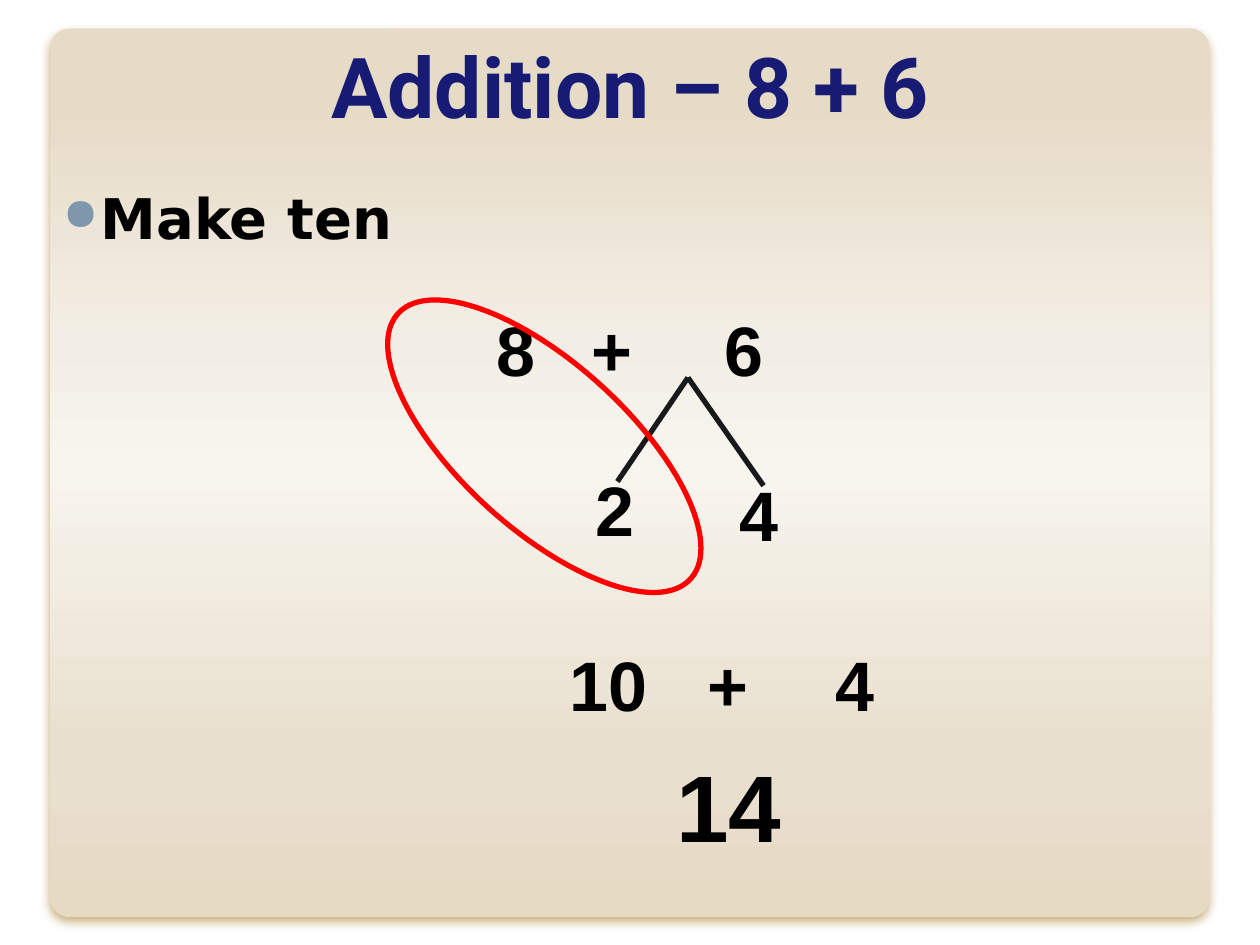
from dataclasses import dataclass

from lxml.etree import SubElement
from pptx import Presentation
from pptx.dml.color import RGBColor
from pptx.enum.shapes import MSO_CONNECTOR, MSO_SHAPE
from pptx.enum.text import MSO_ANCHOR, PP_ALIGN
from pptx.oxml.ns import qn
from pptx.util import Inches, Pt


@dataclass(frozen=True)
class Theme:
    title: str = "171B73"
    text: str = "000000"
    bullet: str = "7E97AD"
    branch: str = "17191A"
    ring: str = "FF0000"
    shadow: str = "956400"
    panel: tuple = ((0, "E6DBC6"), (10, "E7DCC8"), (35, "F3EEE5"),
                    (50, "F8F5EF"), (60, "F3EEE4"), (80, "E9E0CF"), (100, "E6DAC5"))
    title_font: str = "Roboto"
    heading_font: str = "DejaVu Sans"
    number_font: str = "Arial"
    title_size: int = 48
    heading_size: int = 32
    number_size: int = 40
    answer_size: int = 54
    stroke: int = 3


THEME = Theme()


@dataclass(frozen=True)
class Box:
    left: int
    top: int
    width: int
    height: int

    def point(self, across, down):
        return int(self.left + across * self.width), int(self.top + down * self.height)

    def area(self, left, top, width, height):
        return Box(*self.point(left, top), int(width * self.width), int(height * self.height))

    @property
    def bounds(self):
        return self.left, self.top, self.width, self.height


def add_element(parent, tag, **attributes):
    return SubElement(parent, qn(tag), {name: str(value) for name, value in attributes.items()})


def style(paragraph, font_name, size, color=THEME.text):
    font = paragraph.font
    font.name, font.size, font.bold = font_name, Pt(size), True
    font.color.rgb = RGBColor.from_string(color)


def set_line(shape, color):
    shape.line.color.rgb = RGBColor.from_string(color)
    shape.line.width = Pt(THEME.stroke)


def set_tabs(paragraph, positions):
    properties = paragraph._p.get_or_add_pPr()
    tab_list = add_element(properties, "a:tabLst")
    for position in positions:
        add_element(tab_list, "a:tab", pos=int(position), algn="ctr")


def add_number(slide, box, text, size=THEME.number_size, tabs=(), alignment=PP_ALIGN.CENTER):
    frame = slide.shapes.add_textbox(*box.bounds).text_frame
    frame.word_wrap = True
    paragraph = frame.paragraphs[0]
    paragraph.text = text
    paragraph.alignment = alignment
    if tabs:
        set_tabs(paragraph, tabs)
    style(paragraph, THEME.number_font, size)


def add_panel(slide, box):
    panel = slide.shapes.add_shape(MSO_SHAPE.ROUNDED_RECTANGLE, *box.bounds)
    panel.adjustments[0] = 0.022
    panel.line.fill.background()
    panel.fill.gradient()
    panel.fill.gradient_angle = 270
    properties = panel._element.spPr
    stops = properties.find(".//" + qn("a:gsLst"))
    stops.clear()
    for share, color in THEME.panel:
        add_element(add_element(stops, "a:gs", pos=share * 1000), "a:srgbClr", val=color)
    effects = add_element(properties, "a:effectLst")
    shadow = add_element(effects, "a:outerShdw", blurRad=Pt(5), dist=int(Pt(3.6)),
                         dir=5400000, rotWithShape=0)
    shadow_color = add_element(shadow, "a:srgbClr", val=THEME.shadow)
    add_element(shadow_color, "a:alpha", val=50000)
    slide.shapes._spTree.insert(2, panel._element)


def add_title(slide, box):
    title = slide.shapes.title
    title.left, title.top, title.width, title.height = box.bounds
    title.text_frame.vertical_anchor = MSO_ANCHOR.MIDDLE
    paragraph = title.text_frame.paragraphs[0]
    paragraph.text = "Addition – 8 + 6"
    paragraph.alignment = PP_ALIGN.CENTER
    style(paragraph, THEME.title_font, THEME.title_size, THEME.title)


def add_body(slide, box):
    frame = slide.shapes.add_textbox(*box.bounds).text_frame
    frame.word_wrap = True
    frame.margin_top = frame.margin_bottom = Inches(0.03)

    heading = frame.paragraphs[0]
    heading.text = "Make ten"
    properties = heading._p.get_or_add_pPr()
    properties.set("marL", str(Inches(0.5)))
    properties.set("indent", str(Inches(-0.3)))
    add_element(add_element(properties, "a:buClr"), "a:srgbClr", val=THEME.bullet)
    add_element(properties, "a:buSzPct", val=80000)
    add_element(properties, "a:buChar", char="●")
    style(heading, THEME.heading_font, THEME.heading_size)

    addition = frame.add_paragraph()
    addition.text = "\t8\t+\t6"
    addition.space_before = Pt(32)
    set_tabs(addition, [share * box.width for share in (0.4, 0.48, 0.59)])
    style(addition, THEME.number_font, THEME.number_size)


def add_number_bond(slide, box):
    apex = box.point(0.49, 0.34)
    for end in ((0.35, 0.59), (0.64, 0.6)):
        branch = slide.shapes.add_connector(MSO_CONNECTOR.STRAIGHT, *apex, *box.point(*end))
        set_line(branch, THEME.branch)
        add_element(branch._element.spPr, "a:effectLst")
    add_number(slide, box.area(0.25, 0.54, 0.19, 0.23), "2")
    add_number(slide, box.area(0.51, 0.55, 0.24, 0.23), "4")
    ring = slide.shapes.add_shape(MSO_SHAPE.OVAL, *box.area(0.04, 0.03, 0.33, 0.95).bounds)
    ring.rotation = 312.2
    ring.shadow.inherit = False
    ring.fill.background()
    set_line(ring, THEME.ring)


def add_result(slide, box):
    add_number(slide, box.area(0.12, 0.01, 0.47, 0.41), "10\t+",
               tabs=[0.36 * box.width], alignment=PP_ALIGN.LEFT)
    add_number(slide, box.area(0.66, 0.01, 0.27, 0.41), "4")
    add_number(slide, box.area(0.3, 0.46, 0.42, 0.54), "14", THEME.answer_size)


def main():
    presentation = Presentation()
    presentation.slide_width, presentation.slide_height = Inches(10), Inches(7.5)
    slide = presentation.slides.add_slide(presentation.slide_layouts[5])
    page = Box(0, 0, presentation.slide_width, presentation.slide_height)
    add_panel(slide, page.area(0.04, 0.03, 0.92, 0.94))
    add_title(slide, page.area(0.02, 0.01, 0.96, 0.16))
    add_body(slide, page.area(0.02, 0.19, 0.95, 0.8))
    add_number_bond(slide, page.area(0.35, 0.25, 0.4, 0.44))
    add_result(slide, page.area(0.4, 0.67, 0.35, 0.25))
    presentation.save("out.pptx")


if __name__ == "__main__":
    main()
